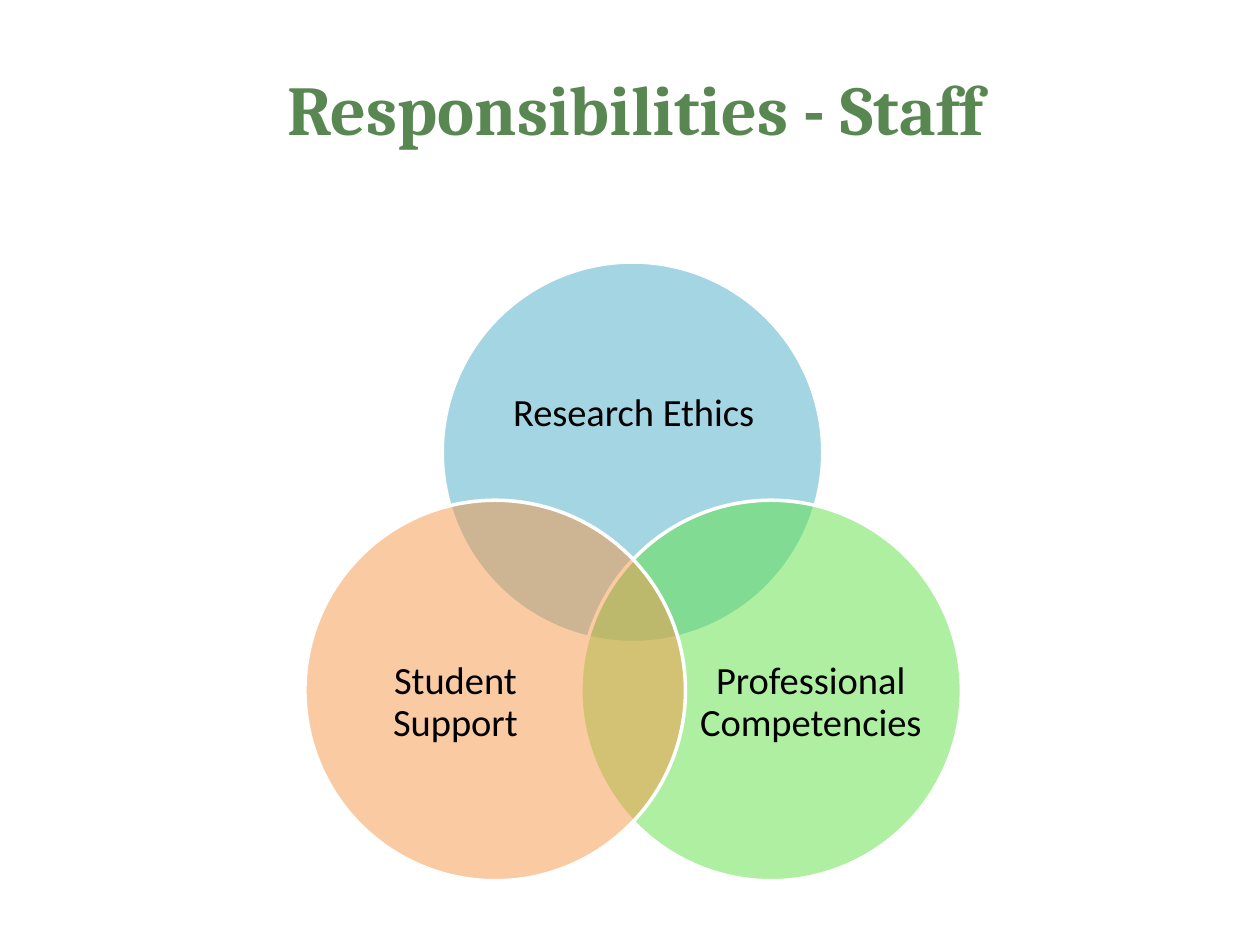
from lxml import etree
from pptx import Presentation
from pptx.dml.color import RGBColor
from pptx.enum import shapes, text
from pptx.oxml.ns import qn
from pptx.util import Inches, Pt

GREEN = RGBColor(0x59, 0x87, 0x52)
BLACK = RGBColor(0, 0, 0)
WHITE = RGBColor(0xFF, 0xFF, 0xFF)
BLUE = RGBColor(0x4B, 0xAC, 0xC6)
LIME = RGBColor(0x60, 0xE1, 0x46)
ORANGE = RGBColor(0xF7, 0x96, 0x46)

DIAMETER = 3.02
# Circle offset in the diagram, label box within its circle, colour, label
CIRCLES = [
    ((1.09, 0), (0.41, 0.53, 2.22, 1.36), BLUE, "Research Ethics"),
    ((2.19, 1.89), (0.92, 0.78, 1.81, 1.66), LIME, "Professional Competencies"),
    ((0, 1.89), (0.29, 0.78, 1.81, 1.66), ORANGE, "Student Support"),
]


def set_text(sp, words, font, size, color, spacing, anchor, bold=False):
    tf = sp.text_frame
    tf.word_wrap = True
    tf.auto_size = text.MSO_AUTO_SIZE.NONE
    tf.vertical_anchor = anchor
    tf.margin_left = tf.margin_right = tf.margin_top = tf.margin_bottom = 0
    p = tf.paragraphs[0]
    p.alignment = text.PP_ALIGN.CENTER
    p.line_spacing = spacing
    r = p.add_run()
    r.text = words
    r.font.name = font
    r.font.size = Pt(size)
    r.font.bold = bold
    r.font.color.rgb = color


def add_title(s, left, top, width, height):
    sp = s.shapes.title
    sp.left, sp.top = Inches(left), Inches(top)
    sp.width, sp.height = Inches(width), Inches(height)
    set_text(sp, "Responsibilities - Staff", "Cambria", 40, GREEN, Pt(48),
             text.MSO_ANCHOR.TOP, bold=True)


def add_circle(group, left, top, color):
    sp = group.shapes.add_shape(shapes.MSO_SHAPE.OVAL, Inches(left), Inches(top),
                                Inches(DIAMETER), Inches(DIAMETER))
    sp.shadow.inherit = False
    sp.fill.solid()
    sp.fill.fore_color.rgb = color
    # Half transparent, so that the overlaps show
    clr = sp.fill._xPr.find(qn("a:solidFill")).find(qn("a:srgbClr"))
    etree.SubElement(clr, qn("a:alpha"), val="50000")
    sp.line.color.rgb = WHITE
    sp.line.width = Pt(2)


def add_venn(s, left, top):
    group = s.shapes.add_group_shape()
    for (dx, dy), (lx, ly, width, height), color, words in CIRCLES:
        x, y = left + dx, top + dy
        add_circle(group, x, y, color)
        label = group.shapes.add_textbox(Inches(x + lx), Inches(y + ly),
                                         Inches(width), Inches(height))
        set_text(label, words, "Calibri", 22, BLACK, 0.9, text.MSO_ANCHOR.MIDDLE)


def main():
    prs = Presentation()
    prs.slide_width, prs.slide_height = Inches(10), Inches(7.5)
    s = prs.slides.add_slide(prs.slide_layouts[5])
    add_title(s, 0.59, 0.52, 8.9, 0.87)
    add_venn(s, 2.42, 2.08)
    prs.save("out.pptx")


if __name__ == "__main__":
    main()
